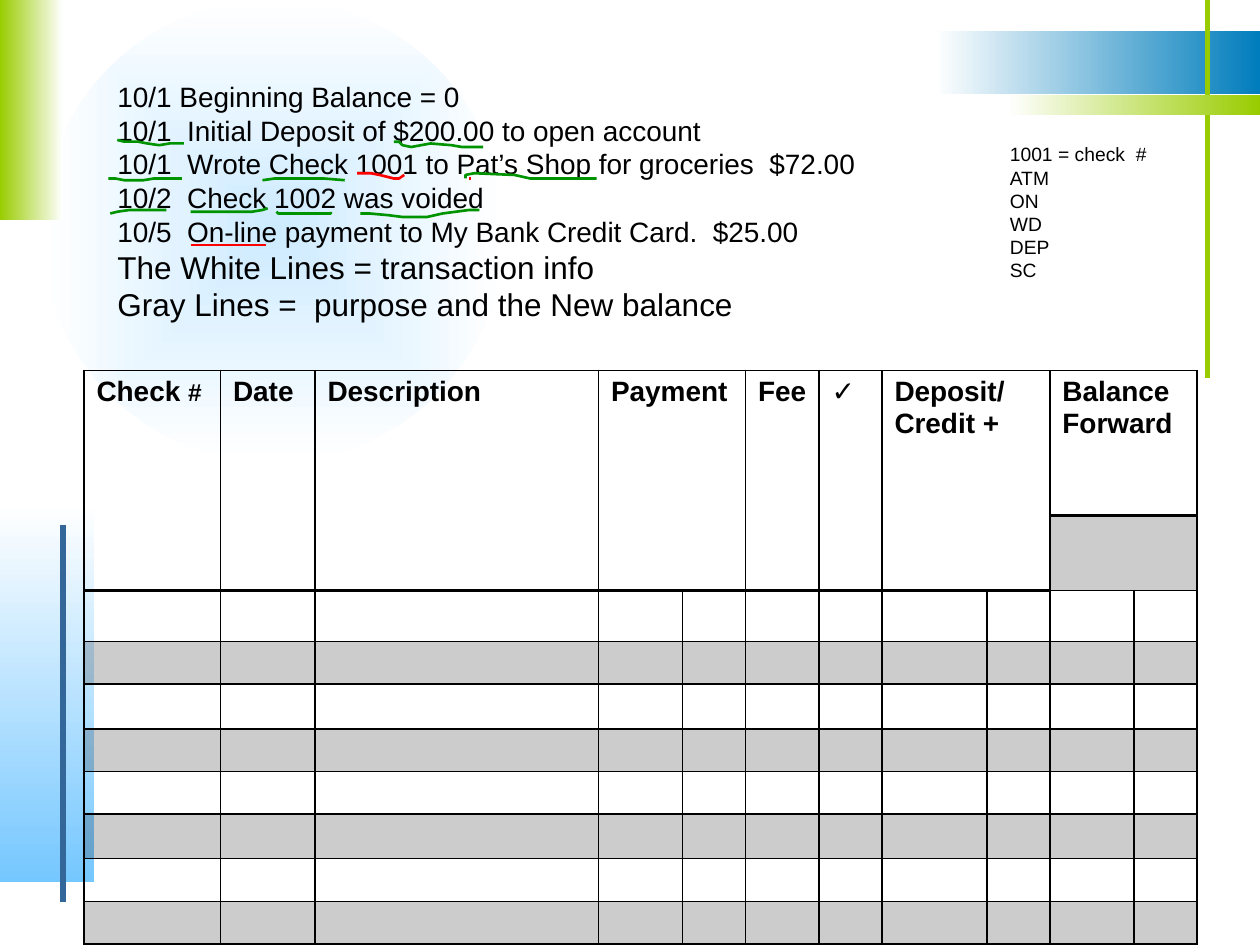
from dataclasses import dataclass
from lxml.etree import SubElement
from pptx import Presentation
from pptx.dml.color import RGBColor
from pptx.enum.shapes import MSO_CONNECTOR, MSO_SHAPE
from pptx.oxml import parse_xml
from pptx.oxml.ns import nsdecls, qn
from pptx.util import Pt


@dataclass(frozen=True)
class Theme:
    font: str = "Arial"
    black: str = "000000"
    white: str = "FFFFFF"
    lime: str = "99CC00"
    ocean: str = "007DBC"
    sky: str = "75C7FF"
    mist: str = "CDEBFF"
    steel: str = "336699"
    red: str = "FF0000"
    green: str = "009300"
    body: int = 16
    large: int = 18
    number_sign: int = 14
    codes: int = 11
    shade_opacity: int = 20
    pen: float = 1.5
    rule: float = 3
    border: float = 1
    heavy_border: float = 2


class SlideBuilder:
    def __init__(self, slide, theme):
        self.shapes = slide.shapes
        self.theme = theme

    def gradient(self, kind, box, start, end, angle=0, radial=False):
        shape = self.shapes.add_shape(kind, *map(Pt, box))
        shape.shadow.inherit = False
        shape.line.fill.background()
        shape.fill.gradient()
        shape.fill.gradient_angle = angle
        for stop, color in zip(shape.fill.gradient_stops, (start, end)):
            stop.color.rgb = RGBColor.from_string(color)
        if radial:
            linear = shape.element.spPr.find(".//" + qn("a:lin"))
            linear.getparent().replace(linear, parse_xml(
                f'<a:path {nsdecls("a")} path="shape">'
                '<a:fillToRect l="50000" t="50000" r="50000" b="50000"/></a:path>'))

    def vertical_rule(self, x, top, bottom, color):
        connector = self.shapes.add_connector(
            MSO_CONNECTOR.STRAIGHT, Pt(x), Pt(top), Pt(x), Pt(bottom))
        connector.line.color.rgb = RGBColor.from_string(color)
        connector.line.width = Pt(self.theme.rule)
        SubElement(connector.element.spPr, qn("a:effectLst"))

    def style(self, font, size, bold=False):
        font.name = self.theme.font
        font.size = Pt(size)
        font.bold = bold
        font.color.rgb = RGBColor.from_string(self.theme.black)

    def text(self, box, lines):
        frame = self.shapes.add_textbox(*map(Pt, box)).text_frame
        frame.word_wrap = True
        frame.text = "\n".join(line for line, size in lines)
        for paragraph, (line, size) in zip(frame.paragraphs, lines):
            self.style(paragraph.font, size)

    def pen_stroke(self, color, points):
        builder = self.shapes.build_freeform(*points[0], scale=Pt(1))
        builder.add_line_segments(points[1:], close=False)
        shape = builder.convert_to_shape()
        shape.shadow.inherit = False
        shape.fill.background()
        shape.line.color.rgb = RGBColor.from_string(color)
        shape.line.width = Pt(self.theme.pen)

    def cell_look(self, cell, shaded, top, bottom):
        theme = self.theme
        if shaded:
            cell.fill.solid()
            cell.fill.fore_color.rgb = RGBColor.from_string(theme.black)
        else:
            cell.fill.background()
        properties = cell._tc.get_or_add_tcPr()
        if shaded:
            color = properties.find(".//" + qn("a:srgbClr"))
            SubElement(color, qn("a:alpha"), val=str(theme.shade_opacity * 1000))
        widths = {"L": theme.border, "R": theme.border, "T": top, "B": bottom}
        for index, (side, width) in enumerate(widths.items()):
            properties.insert(index, parse_xml(
                f'<a:ln{side} {nsdecls("a")} w="{Pt(width)}"><a:solidFill>'
                f'<a:srgbClr val="{theme.black}"/></a:solidFill></a:ln{side}>'))

    def register(self, left, top, columns, rows, headers, merges):
        theme = self.theme
        table = self.shapes.add_table(
            len(rows), len(columns), Pt(left), Pt(top),
            Pt(sum(columns)), Pt(sum(rows))).table
        table.first_row = table.horz_banding = False
        for column, width in zip(table.columns, columns):
            column.width = Pt(width)
        for row, height in zip(table.rows, rows):
            row.height = Pt(height)

        balance = len(columns) - 2

        def edge_below(row, column):
            heavy = row == 0 or (row == 1 and column < balance)
            return theme.heavy_border if heavy else theme.border

        for row in range(len(rows)):
            for column in range(len(columns)):
                cell = table.cell(row, column)
                shaded = row % 2 == 1 and (row > 1 or column >= balance)
                self.cell_look(cell, shaded, edge_below(row - 1, column),
                               edge_below(row, column))
                if row > 0:
                    cell.margin_top = cell.margin_bottom = 0
        for first_row, first_column, last_row, last_column in merges:
            table.cell(first_row, first_column).merge(table.cell(last_row, last_column))
        for column, header in headers.items():
            frame = table.cell(0, column).text_frame
            frame.text = header
            for paragraph in frame.paragraphs:
                self.style(paragraph.font, theme.body, bold=True)
        number_sign = table.cell(0, 0).text_frame.paragraphs[0].add_run()
        number_sign.text = "#"
        self.style(number_sign.font, theme.number_sign, bold=True)


def main():
    presentation = Presentation()
    presentation.slide_width, presentation.slide_height = Pt(720), Pt(540)
    slide = presentation.slides.add_slide(presentation.slide_layouts[6])
    theme = Theme()
    builder = SlideBuilder(slide, theme)
    rectangle = MSO_SHAPE.RECTANGLE

    builder.gradient(MSO_SHAPE.OVAL, (24, 0, 264, 264), theme.mist, theme.white, radial=True)
    builder.gradient(rectangle, (534, 18, 186, 36), theme.white, theme.ocean)
    builder.gradient(rectangle, (0, 288, 54, 216), theme.white, theme.sky, angle=270)
    builder.vertical_rule(690, 0, 216, theme.lime)
    builder.gradient(rectangle, (0, 0, 36, 126), theme.lime, theme.white)
    builder.gradient(rectangle, (576, 54, 144, 12), theme.white, theme.lime)
    builder.vertical_rule(36, 300, 515.5, theme.steel)

    builder.register(
        48, 211.7,
        columns=[78, 54, 162, 48, 36, 42, 36, 60, 36, 48, 36],
        rows=[83, 42.7, 29] + [24.3, 25.7, 24.3] * 2 + [24.3],
        headers={0: "Check ", 1: "Date", 2: "Description", 3: "Payment", 5: "Fee",
                 6: "✓", 7: "Deposit/\nCredit +", 9: "Balance Forward"},
        merges=[(0, 0, 1, 0), (0, 1, 1, 1), (0, 2, 1, 2), (0, 3, 1, 4), (0, 5, 1, 5),
                (0, 6, 1, 6), (0, 7, 1, 8), (0, 9, 0, 10), (1, 9, 1, 10)])

    transactions = ["10/1 Beginning Balance = 0",
                    "10/1  Initial Deposit of $200.00 to open account",
                    "10/1  Wrote Check 1001 to Pat’s Shop for groceries  $72.00",
                    "10/2  Check 1002 was voided",
                    "10/5  On-line payment to My Bank Credit Card.  $25.00"]
    legend = ["The White Lines = transaction info",
              "Gray Lines =  purpose and the New balance"]
    builder.text((60, 42, 594, 170), [(line, theme.body) for line in transactions]
                 + [(line, theme.large) for line in legend])
    codes = ["1001 = check  #", "ATM", "ON", "WD", "DEP", "SC"]
    builder.text((570, 78, 114, 87), [(code, theme.codes) for code in codes])

    red_strokes = [
        [(109.4, 140.4), (137, 140.4), (151.9, 139.7)],
        [(267.8, 101.5), (268.6, 101.5)],
        [(203.8, 99.4), (206, 98.6), (211.7, 98.6), (216.7, 100.1), (225, 102.2),
         (228.2, 102.2), (231.1, 100.1)]]
    green_strokes = [
        [(67, 79.9), (70.6, 81.4), (73.4, 81.4), (79.2, 80.6), (83.5, 82.1),
         (91.4, 82.8), (97.2, 82.1), (105.1, 82.1)],
        [(225.4, 80.6), (227.5, 81.4), (230.4, 82.8), (235.4, 83.5), (246.2, 82.1),
         (257.8, 82.8), (264.2, 83.5), (272.9, 83.5), (275.8, 84.2)],
        [(61.9, 101.5), (65.5, 101.5), (71.3, 103), (82.1, 103), (87.8, 102.2),
         (104.4, 102.2)],
        [(149.8, 103), (157, 102.2), (174.2, 102.2), (180, 101.5), (185, 102.2),
         (196.6, 103)],
        [(265.7, 101.5), (266.4, 100.1), (270.7, 99.4), (293.8, 100.1), (303.1, 101.5),
         (310.3, 102.2), (322.6, 102.2), (329.8, 101.5), (339.8, 101.5), (340.6, 102.2)],
        [(63.4, 121.7), (67, 121), (74.2, 120.2), (82.8, 119.5), (95, 119.5)],
        [(157.7, 121), (159.1, 121.7), (167.8, 121.7), (173.5, 122.4), (180.7, 122.4),
         (188.6, 121.7), (189.4, 121)],
        [(109.4, 121), (144, 121), (150.5, 120.2), (152.6, 118.8)],
        [(205.9, 121.7), (211, 121.7), (222.5, 123.1), (229.7, 123.8), (244.1, 123.8),
         (253.4, 122.4), (267.8, 119.5), (272.2, 119.5), (273.6, 120.2)]]
    for color, strokes in ((theme.red, red_strokes), (theme.green, green_strokes)):
        for points in strokes:
            builder.pen_stroke(color, points)

    presentation.save("out.pptx")


if __name__ == "__main__":
    main()
